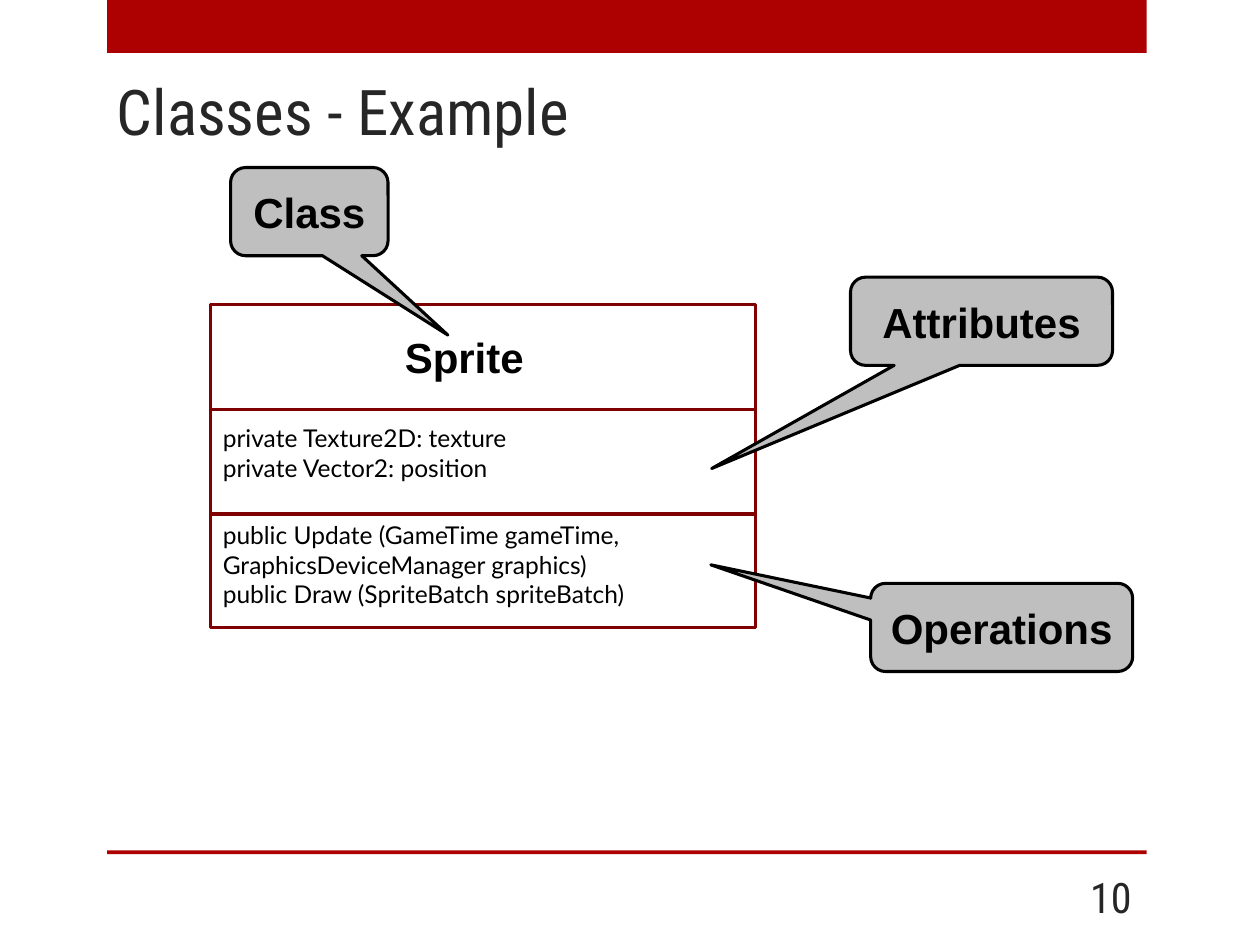
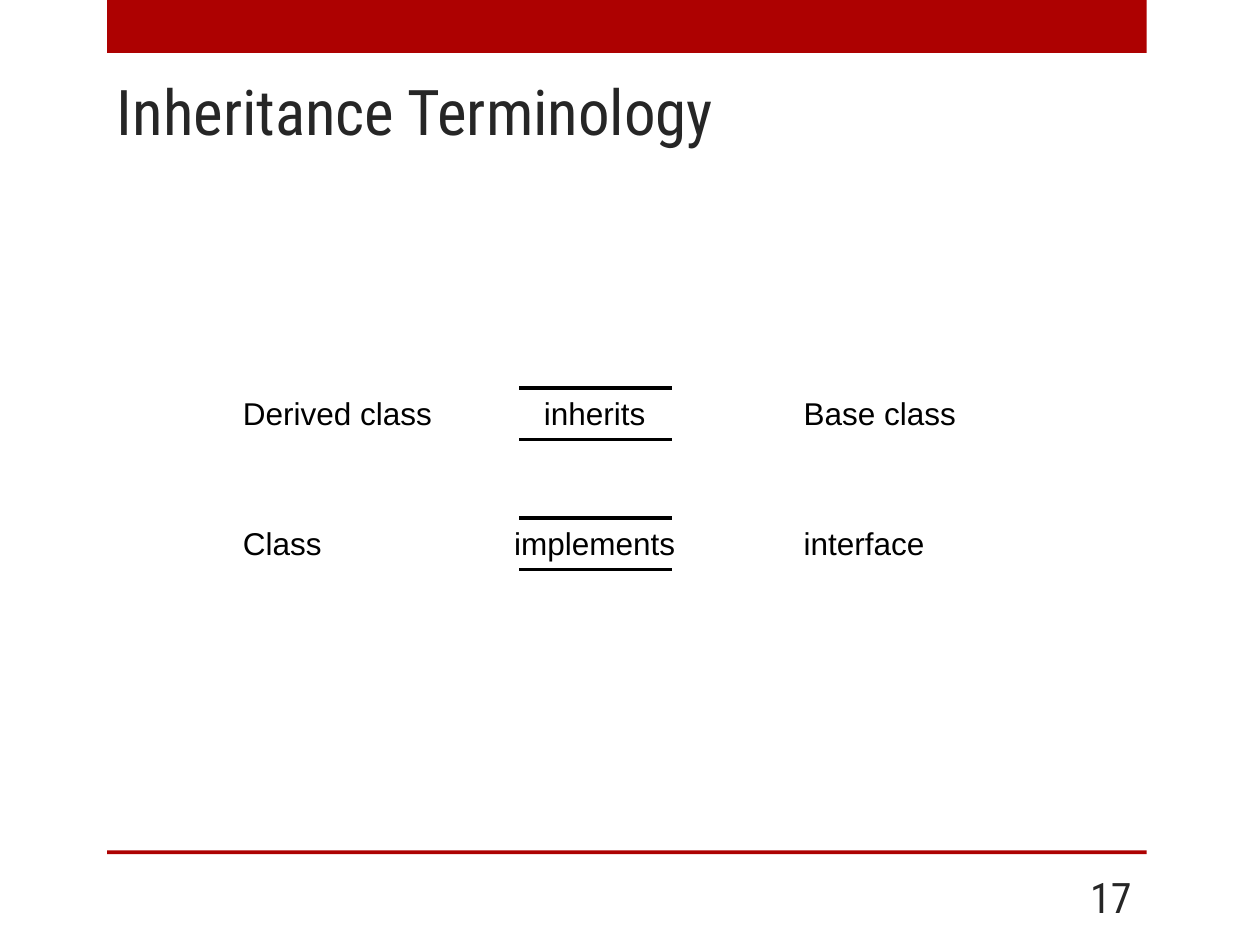
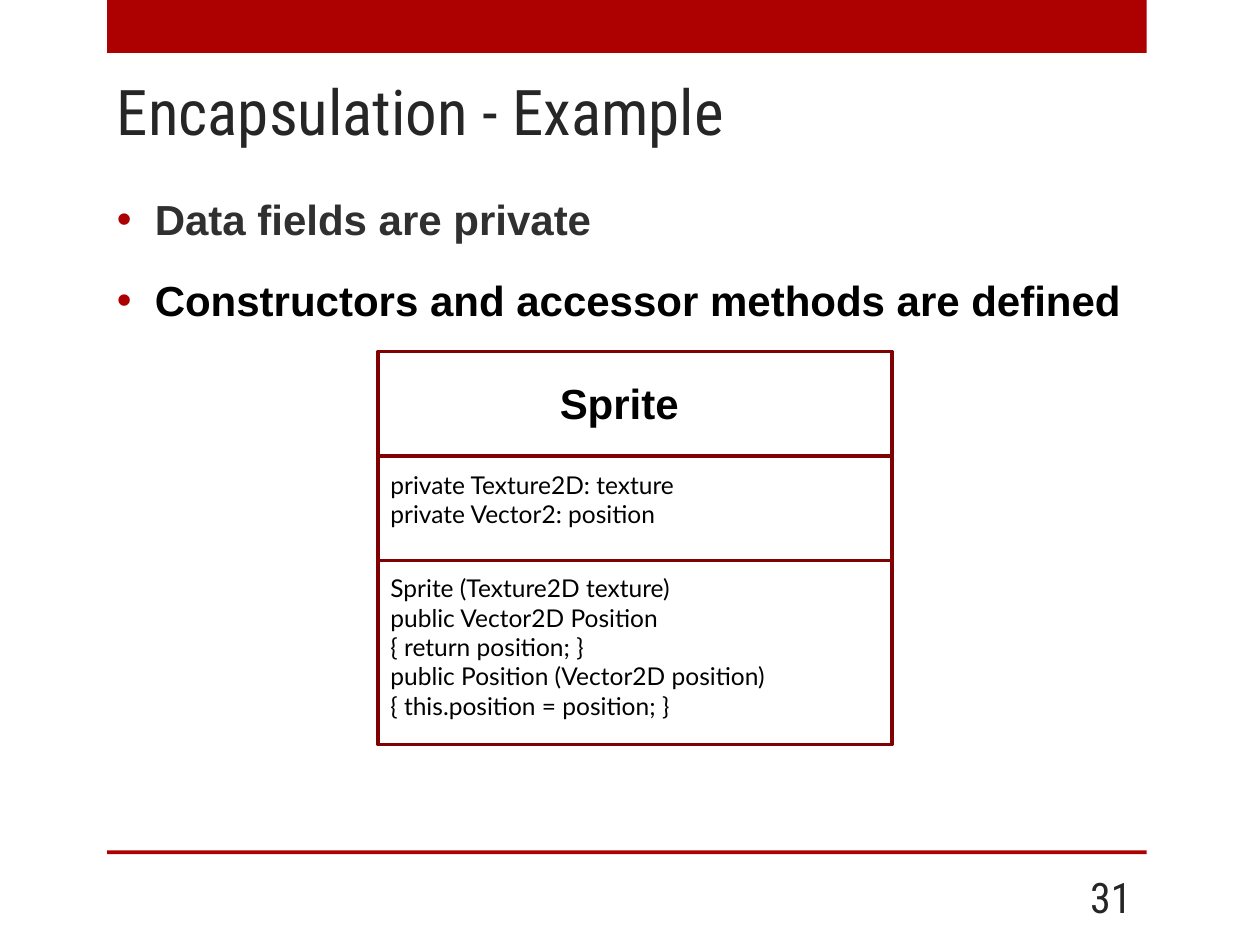
import pptx
import pptx.util
import pptx.dml.color
import pptx.enum.shapes
import pptx.enum.text
import pptx.oxml
import lxml.etree

Inches = pptx.util.Inches
Pt = pptx.util.Pt
KIND = pptx.enum.shapes.MSO_SHAPE
ALIGN = pptx.enum.text.PP_ALIGN
ANCHOR = pptx.enum.text.MSO_ANCHOR
COLORS = {
    "band": "AD0101",
    "edge": "800101",
    "title": "262626",
    "soft": "303030",
    "ink": "000000",
    "note": "BFBFBF",
}
HEAD = "Roboto Condensed"
FIELDS = ["private Texture2D: texture", "private Vector2: position"]


def color(name):
    """Return the named colour."""
    return pptx.dml.color.RGBColor.from_string(COLORS[name])


def write(para, text, size, font, ink="ink", bold=False):
    """Add one styled run to a paragraph."""
    run = para.add_run()
    run.text = text
    run.font.size = Pt(size)
    run.font.name = font
    run.font.bold = bold
    run.font.color.rgb = color(ink)


def label(slide, box, lines, size, font, ink="ink", bold=False,
          align=ALIGN.LEFT, anchor=ANCHOR.TOP, wrap=True):
    """Add a text box with one paragraph per line."""
    frame = slide.shapes.add_textbox(*map(Inches, box)).text_frame
    frame.word_wrap = wrap
    frame.vertical_anchor = anchor
    for i, line in enumerate(lines):
        para = frame.add_paragraph() if i else frame.paragraphs[0]
        para.alignment = align
        write(para, line, size, font, ink, bold)


def block(slide, kind, box, fill=None, edge=None):
    """Add a preset shape with an optional fill and outline."""
    shape = slide.shapes.add_shape(kind, *map(Inches, box))
    shape.shadow.inherit = False
    if fill:
        shape.fill.solid()
        shape.fill.fore_color.rgb = color(fill)
    else:
        shape.fill.background()
    if edge:
        shape.line.color.rgb = color(edge)
        shape.line.width = Pt(1.75)
    else:
        shape.line.fill.background()
    return shape


def rule(slide, left, right, top):
    """Draw a level black line."""
    line = slide.shapes.add_connector(
        pptx.enum.shapes.MSO_CONNECTOR.STRAIGHT,
        Inches(left), Inches(top), Inches(right), Inches(top))
    line.line.color.rgb = color("ink")
    line.line.width = Pt(2)
    lxml.etree.SubElement(line._element.spPr, pptx.oxml.ns.qn("a:effectLst"))


def callout(slide, box, tip, text):
    """Add a grey speech bubble whose tail ends at tip."""
    shape = block(slide, KIND.ROUNDED_RECTANGULAR_CALLOUT, box, "note", "ink")
    for i, part in enumerate((*tip, 0.17)):
        shape.adjustments[i] = part
    frame = shape.text_frame
    frame.word_wrap = False
    frame.vertical_anchor = ANCHOR.MIDDLE
    para = frame.paragraphs[0]
    para.alignment = ALIGN.CENTER
    write(para, text, 24, "Arial", bold=True)


def sprite(slide, left, top, width, span, last, drop, methods):
    """Draw the Sprite class box with its fields and methods."""
    row = 0.83
    for i, height in enumerate((row, row, last)):
        block(slide, KIND.RECTANGLE, (left, top + i * row, width, height),
              edge="edge")
    label(slide, (left, top + 0.16, span, 0.5), ["Sprite"], 24, "Arial",
          bold=True, align=ALIGN.CENTER)
    label(slide, (left, top + 0.89, width, 0.57), FIELDS, 14, "Lato")
    label(slide, (left, top + 2 * row + drop, width, last - 0.1),
          methods, 14, "Lato")


def bullets(slide, box, items):
    """Add a bold bullet list from text and colour pairs."""
    frame = slide.shapes.add_textbox(*map(Inches, box)).text_frame
    frame.word_wrap = True
    qn = pptx.oxml.ns.qn
    for i, (text, ink) in enumerate(items):
        para = frame.add_paragraph() if i else frame.paragraphs[0]
        para.line_spacing = 1.4
        para.space_before = Pt(6)
        props = para._p.get_or_add_pPr()
        props.set("marL", str(Inches(0.3)))
        props.set("indent", str(-Inches(0.3)))
        tint = lxml.etree.SubElement(props, qn("a:buClr"))
        lxml.etree.SubElement(tint, qn("a:srgbClr"), val=COLORS["band"])
        lxml.etree.SubElement(props, qn("a:buFont"), typeface="Arial")
        lxml.etree.SubElement(props, qn("a:buChar"), char="•")
        write(para, text, 24, "Arial", ink, True)


def page(deck, title, number):
    """Add a slide with bands, title and page number."""
    slide = deck.slides.add_slide(deck.slide_layouts[6])
    for top, height in ((0, 0.42), (6.75, 0.03)):
        block(slide, KIND.RECTANGLE, (0.85, top, 8.25, height), "band")
    label(slide, (0.83, 0.53, 8.25, 0.72), [title], 36, HEAD, "title")
    label(slide, (8.25, 6.92, 0.83, 0.4), [str(number)], 24, HEAD, "title",
          align=ALIGN.RIGHT, anchor=ANCHOR.MIDDLE)
    return slide


def classes(deck):
    """Build the slide on the parts of a class."""
    slide = page(deck, "Classes - Example", 10)
    sprite(slide, 1.67, 2.42, 4.33, 4.03, 0.9, 0, [
        "public Update (GameTime gameTime, GraphicsDeviceManager graphics)",
        "public Draw (SpriteBatch spriteBatch)"])
    callout(slide, (1.83, 1.33, 1.25, 0.7), (0.88, 1.4), "Class")
    callout(slide, (6.75, 2.2, 2.08, 0.7), (-1.03, 1.67), "Attributes")
    callout(slide, (6.91, 4.63, 2.08, 0.7), (-1.11, -0.71), "Operations")


def terms(deck):
    """Build the slide on the words for inheritance."""
    slide = page(deck, "Inheritance Terminology", 17)
    rows = (("Derived class", "inherits", "Base class"),
            ("Class", "implements", "interface"))
    for i, (child, verb, parent) in enumerate(rows):
        top = 3.08 + i * 1.03
        label(slide, (1.83, top, 1.72, 0.4), [child], 18, "Arial", wrap=False)
        label(slide, (3.92, top, 1.6, 0.4), [verb], 18, "Arial",
              align=ALIGN.CENTER)
        label(slide, (6.28, top, 1.42, 0.4), [parent], 18, "Arial", wrap=False)
        for line in (top, top + 0.41):
            rule(slide, 4.12, 5.33, line)


def hiding(deck):
    """Build the slide on encapsulation."""
    slide = page(deck, "Encapsulation - Example", 31)
    bullets(slide, (0.83, 1.33, 8.25, 1.33), [
        ("Data fields are private", "soft"),
        ("Constructors and accessor methods are defined", "ink")])
    sprite(slide, 3, 2.79, 4.08, 3.83, 1.46, 0.05, [
        "Sprite (Texture2D texture)",
        "public Vector2D Position",
        "{ return position; }",
        "public Position (Vector2D position)",
        "{ this.position = position; }"])


def main():
    """Build and save the deck."""
    deck = pptx.Presentation()
    deck.slide_width = Inches(10)
    deck.slide_height = Inches(7.5)
    classes(deck)
    terms(deck)
    hiding(deck)
    deck.save("out.pptx")


if __name__ == "__main__":
    main()
